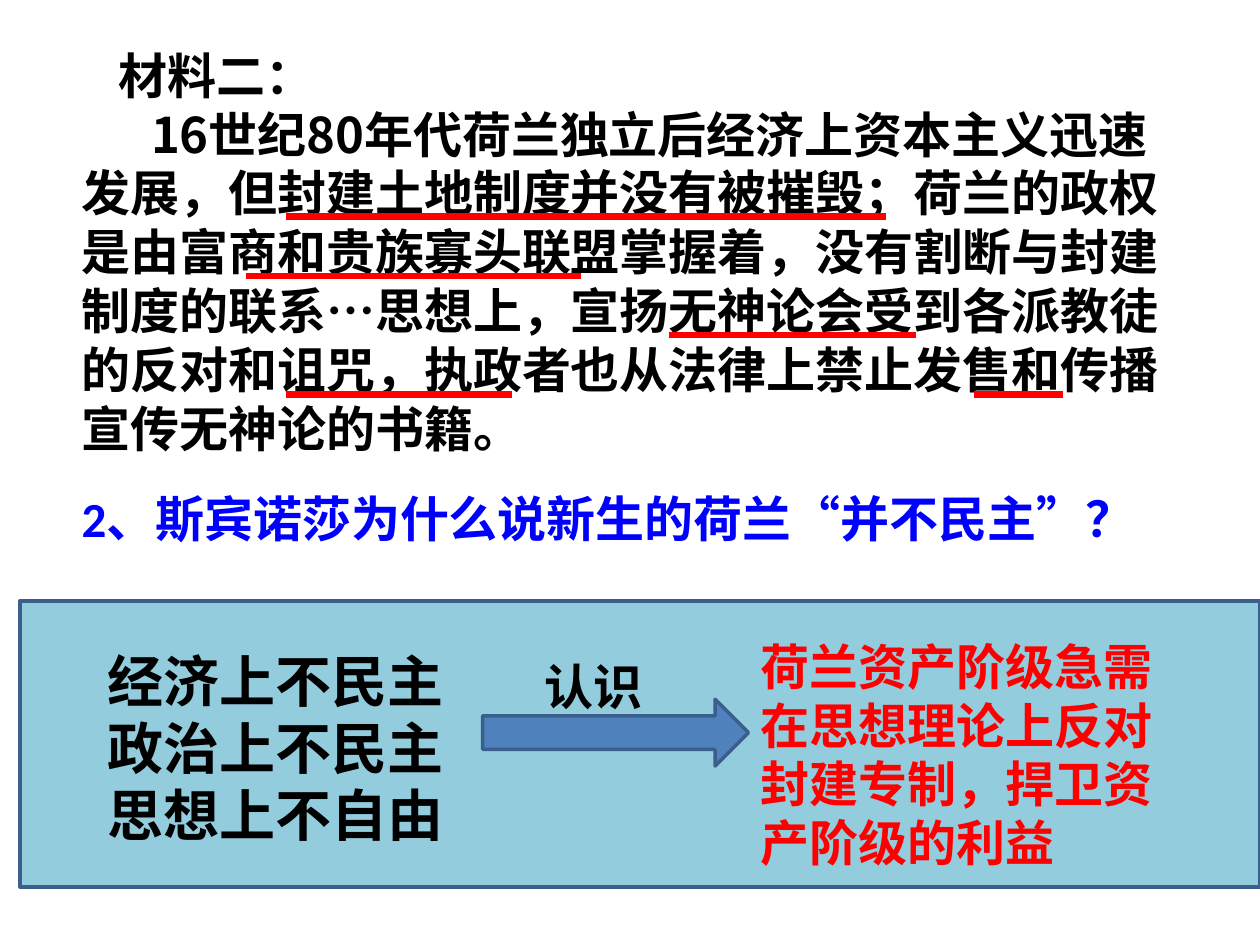
from lxml.etree import SubElement
from pptx import Presentation
from pptx.dml.color import RGBColor
from pptx.enum.shapes import MSO_CONNECTOR, MSO_SHAPE
from pptx.enum.text import MSO_AUTO_SIZE, PP_ALIGN
from pptx.oxml.ns import qn
from pptx.util import Inches, Pt

CHINESE_FONT = "Noto Sans CJK SC"
BLACK, RED, BLUE = "000000", "FF0000", "0000FF"
PANEL_FILL, ARROW_FILL, OUTLINE = "93CDDD", "4F81BD", "3A5F8C"

MATERIAL = [
    "材料二：",
    "16世纪80年代荷兰独立后经济上资本主义迅速发展，但封建土地制度并没有被摧毁；"
    "荷兰的政权是由富商和贵族寡头联盟掌握着，没有割断与封建制度的联系…思想上，"
    "宣扬无神论会受到各派教徒的反对和诅咒，执政者也从法律上禁止发售和传播宣传无神论的书籍。",
]
QUESTION = ["2、斯宾诺莎为什么说新生的荷兰“并不民主”？"]
REASONS = ["经济上不民主", "政治上不民主", "思想上不自由"]
CONCLUSION = ["荷兰资产阶级急需", "在思想理论上反对", "封建专制，捍卫资", "产阶级的利益"]
UNDERLINES = [
    (2.27, 7.03, 1.72),
    (1.95, 4.61, 2.19),
    (5.31, 7.27, 2.66),
    (2.27, 4.06, 3.13),
    (7.73, 8.44, 3.13),
]


def color(value):
    """Turn a hex string into a colour."""
    return RGBColor.from_string(value)


def add_run(paragraph, text, size, font_name, text_color, chinese_font):
    """Add one bold run with its Latin and Chinese fonts."""
    run = paragraph.add_run()
    run.text = text
    run.font.size = Pt(size)
    run.font.bold = True
    run.font.color.rgb = color(text_color)
    run.font.name = font_name
    properties = run._r.get_or_add_rPr()
    properties.set("lang", "zh-CN")
    SubElement(properties, qn("a:ea")).set("typeface", chinese_font)


def add_text(slide, box, lines, size, font_name, text_color, align=PP_ALIGN.LEFT,
             wrap=True, indents=(), chinese_font=CHINESE_FONT):
    """Add a text box with one paragraph for each line."""
    shape = slide.shapes.add_textbox(*map(Inches, box))
    frame = shape.text_frame
    frame.word_wrap = wrap
    frame.auto_size = MSO_AUTO_SIZE.SHAPE_TO_FIT_TEXT
    for index, line in enumerate(lines):
        paragraph = frame.add_paragraph() if index else frame.paragraphs[0]
        paragraph.alignment = align
        if indents:
            paragraph._p.get_or_add_pPr().set("indent", str(Inches(indents[index])))
        add_run(paragraph, line, size, font_name, text_color, chinese_font)


def add_block(slide, kind, box, fill):
    """Add a filled, outlined preset shape."""
    shape = slide.shapes.add_shape(kind, *map(Inches, box))
    shape.shadow.inherit = False
    shape.fill.solid()
    shape.fill.fore_color.rgb = color(fill)
    shape.line.color.rgb = color(OUTLINE)
    shape.line.width = Pt(2)


def add_underline(slide, left, right, top):
    """Add a thick red line under a key phrase."""
    line = slide.shapes.add_connector(
        MSO_CONNECTOR.STRAIGHT, Inches(left), Inches(top), Inches(right), Inches(top))
    line.line.color.rgb = color(RED)
    line.line.width = Pt(3.75)
    SubElement(line._element.spPr, qn("a:effectLst"))


def main():
    """Build the slide and save it."""
    presentation = Presentation()
    presentation.slide_width, presentation.slide_height = Inches(10), Inches(7.5)
    slide = presentation.slides.add_slide(presentation.slide_layouts[6])
    add_block(slide, MSO_SHAPE.RECTANGLE, (0.16, 4.77, 9.84, 2.27), PANEL_FILL)
    add_text(slide, (-0.31, 5.08, 5, 1.72), REASONS, 32, "Calibri", BLACK,
             align=PP_ALIGN.CENTER)
    add_text(slide, (5.94, 5, 5, 1.99), CONCLUSION, 28, "Times New Roman", RED)
    add_block(slide, MSO_SHAPE.RIGHT_ARROW, (3.83, 5.55, 2.11, 0.53), ARROW_FILL)
    add_text(slide, (4.22, 5.16, 0.99, 0.57), ["认识"], 28, "Noto Sans CJK JP", BLACK,
             wrap=False, chinese_font="Noto Sans CJK JP")
    add_text(slide, (0.55, 0.31, 8.75, 3.4), MATERIAL, 28, CHINESE_FONT, BLACK,
             indents=(0.29, 0.55))
    for left, right, top in UNDERLINES:
        add_underline(slide, left, right, top)
    add_text(slide, (0.55, 3.83, 8.67, 0.57), QUESTION, 28, "Calibri", BLUE)
    presentation.save("out.pptx")


if __name__ == "__main__":
    main()
